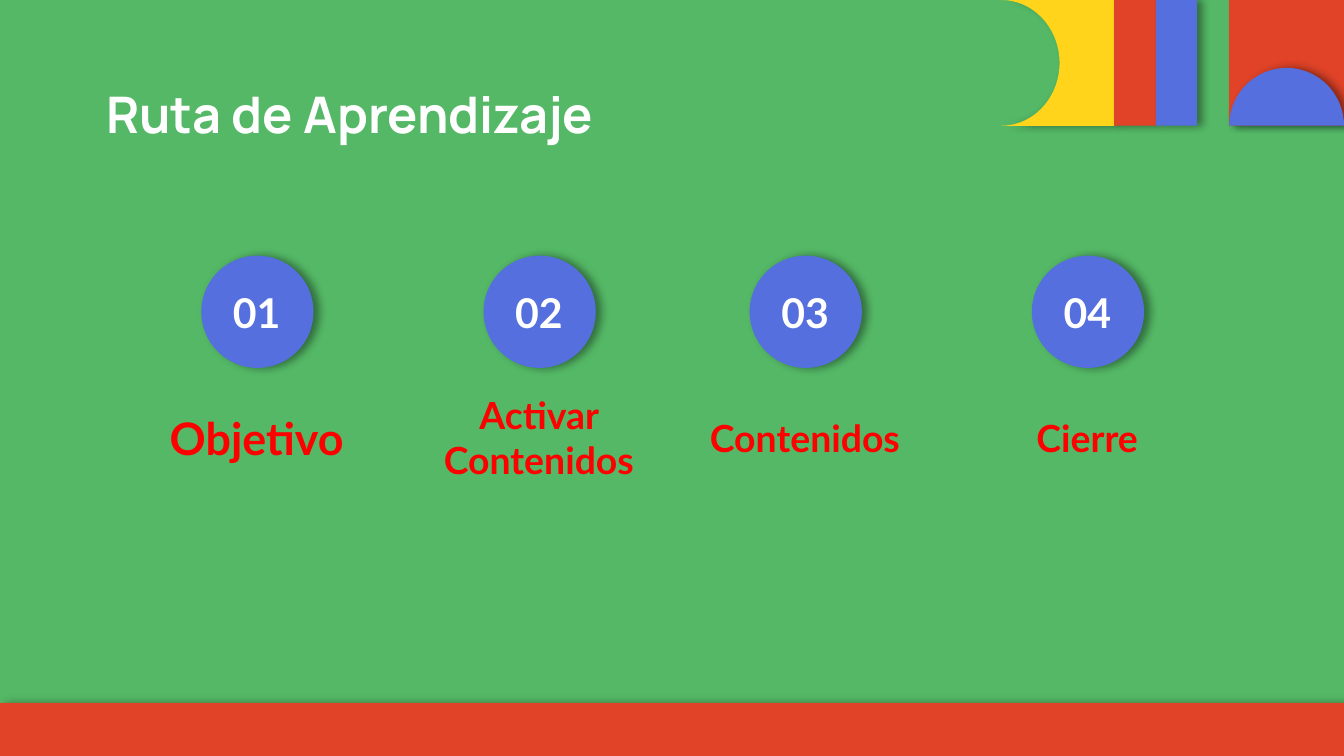
from math import cos, pi, sin

from lxml import etree
from pptx import Presentation
from pptx.dml.color import RGBColor
from pptx.enum.shapes import MSO_SHAPE
from pptx.enum.text import MSO_ANCHOR, MSO_AUTO_SIZE, PP_ALIGN
from pptx.oxml.ns import qn
from pptx.util import Inches, Pt

RECTANGLE, OVAL = MSO_SHAPE.RECTANGLE, MSO_SHAPE.OVAL
MIDDLE, NO_FIT = MSO_ANCHOR.MIDDLE, MSO_AUTO_SIZE.NONE
LEFT, CENTER = PP_ALIGN.LEFT, PP_ALIGN.CENTER

COLORS = {
    "green": "54B866",
    "red": "E04328",
    "yellow": "FFD41A",
    "blue": "556FDE",
    "white": "FFFFFF",
    "label": "FF0000",
    "shadow": "000000",
}
COLUMNS, ROWS = 100, 56.25
CELL = Inches(0.1)


def arc(center_x, center_y, radius_x, radius_y, start, end, steps=60):
    """Return points along an elliptical arc, with angles in radians."""
    angles = [start + (end - start) * step / steps for step in range(steps + 1)]
    return [(center_x + radius_x * cos(a), center_y + radius_y * sin(a)) for a in angles]


class SlideBuilder:
    """Draws styled elements on one slide, measured in grid columns and rows."""

    def __init__(self, presentation):
        self.slide = presentation.slides.add_slide(presentation.slide_layouts[5])
        self.paint(self.slide.background, "green")

    def paint(self, target, color):
        target.fill.solid()
        target.fill.fore_color.rgb = RGBColor.from_string(COLORS[color])

    def cells(self, *lengths):
        return [round(length * CELL) for length in lengths]

    def finish(self, shape, color):
        self.paint(shape, color)
        shape.line.fill.background()
        shape.shadow.inherit = False
        effects = shape._element.spPr.find(qn("a:effectLst"))
        shadow = etree.SubElement(
            effects, qn("a:outerShdw"), blurRad=str(Pt(4.5)), dist=str(Pt(3)),
            dir="0", algn="bl", rotWithShape="0")
        tint = etree.SubElement(shadow, qn("a:srgbClr"), val=COLORS["shadow"])
        etree.SubElement(tint, qn("a:alpha"), val="40000")

    def block(self, kind, box, color):
        self.finish(self.slide.shapes.add_shape(kind, *self.cells(*box)), color)

    def outline(self, points, color):
        start, *others = [self.cells(*point) for point in points]
        builder = self.slide.shapes.build_freeform(*start)
        builder.add_line_segments(others, close=True)
        self.finish(builder.convert_to_shape(), color)

    def set_text(self, shape, text, font, size, color, align):
        frame = shape.text_frame
        frame.word_wrap = True
        frame.auto_size = NO_FIT
        frame.vertical_anchor = MIDDLE
        frame.margin_left = frame.margin_right = CELL
        frame.margin_top = frame.margin_bottom = CELL
        frame.text = text
        paragraph = frame.paragraphs[0]
        paragraph.alignment = align
        paragraph.font.name = font
        paragraph.font.size = Pt(size)
        paragraph.font.bold = True
        paragraph.font.color.rgb = RGBColor.from_string(COLORS[color])

    def title(self, text, box):
        heading = self.slide.shapes.title
        heading.left, heading.top, heading.width, heading.height = self.cells(*box)
        self.set_text(heading, text, "Manrope", 27, "white", LEFT)

    def label(self, text, box, size, color):
        textbox = self.slide.shapes.add_textbox(*self.cells(*box))
        self.set_text(textbox, text, "Lato", size, color, CENTER)


def main():
    presentation = Presentation()
    presentation.slide_width = round(COLUMNS * CELL)
    presentation.slide_height = round(ROWS * CELL)
    page = SlideBuilder(presentation)

    band = 9.36
    page.block(RECTANGLE, (0, 52.3, COLUMNS, ROWS - 52.3), "red")
    page.block(RECTANGLE, (91.45, 0, 8.55, band), "red")
    notch = arc(74.5, band / 2, 4.34, band / 2, -pi / 2, pi / 2)
    page.outline([*notch, (82.9, band), (82.9, 0)], "yellow")
    page.block(RECTANGLE, (82.9, 0, 3.1, band), "red")
    page.block(RECTANGLE, (86, 0, 3.05, band), "blue")
    page.outline(arc(95.73, band, 4.27, 4.3, pi, 2 * pi), "blue")

    page.title("Ruta de Aprendizaje", (6.9, 5.9, 85.3, 5.1))

    steps = [
        (19.1, "Objetivo", 24),
        (40.1, "Activar Contenidos", 20),
        (59.9, "Contenidos", 20),
        (80.9, "Cierre", 20),
    ]
    diameter, number_side, label_width = 8.35, 6.8, 16.6
    middle = 23.2
    for number, (center, step, size) in enumerate(steps, 1):
        page.block(OVAL, (center + 0.05 - diameter / 2, middle - diameter / 2,
                          diameter, diameter), "blue")
        page.label(f"{number:02}", (center - number_side / 2, middle - number_side / 2,
                                    number_side, number_side), 22, "white")
        page.label(step, (center - label_width / 2, 29.9, label_width, 5.3), size, "label")

    presentation.save("out.pptx")


if __name__ == "__main__":
    main()
